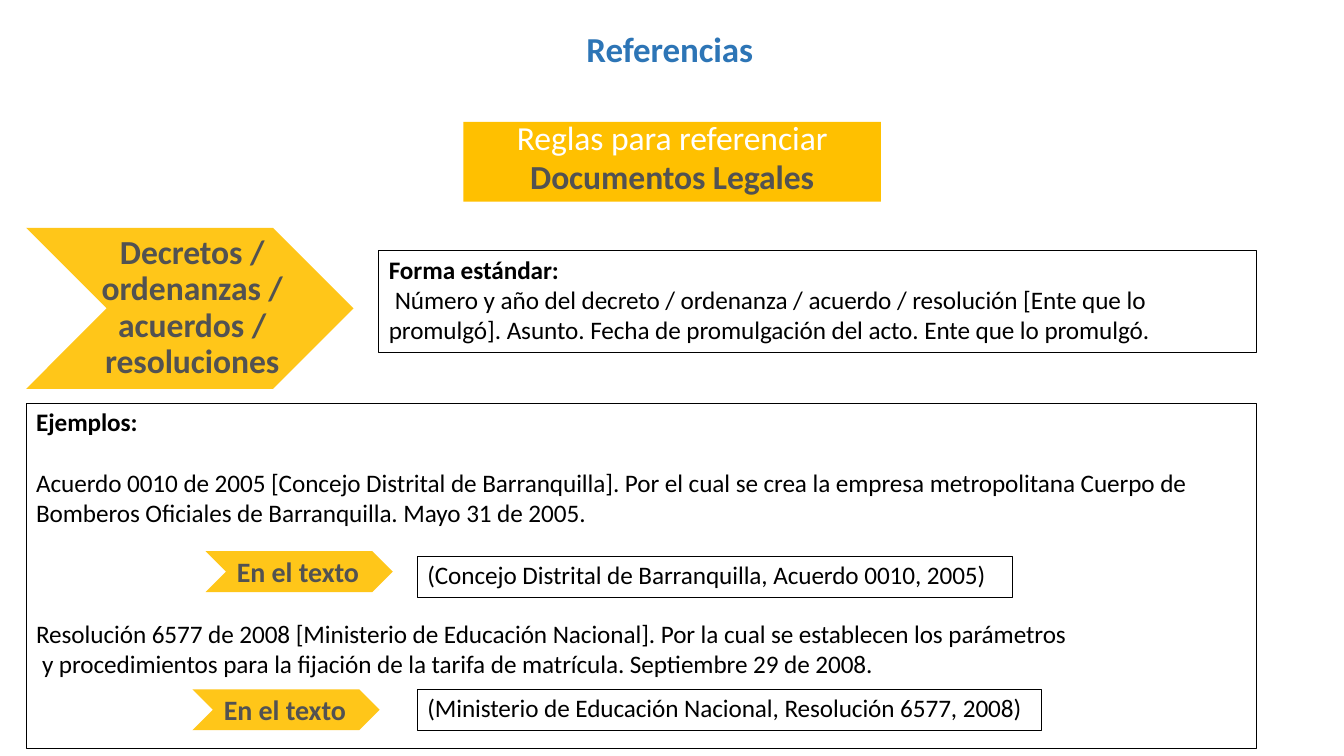
"""Build the slide on referencing legal documents."""
from dataclasses import dataclass

import pptx
import pptx.dml.color
import pptx.enum.shapes
import pptx.enum.text
import pptx.oxml
import pptx.shapes.autoshape
import pptx.slide
import pptx.util

Cm = pptx.util.Cm
Pt = pptx.util.Pt
Align = pptx.enum.text.PP_ALIGN
Anchor = pptx.enum.text.MSO_ANCHOR


@dataclass(frozen=True)
class Theme:
    font: str = "Calibri"
    blue: str = "2D75B6"
    amber: str = "FFC000"
    grey: str = "525252"
    black: str = "000000"
    white: str = "FFFFFF"
    title: float = 25
    heading: float = 24
    label: float = 20
    body: float = 18
    tracking: int = -6
    amber_opacity: int = 90000


THEME = Theme()


@dataclass(frozen=True)
class Area:
    left: float
    top: float
    width: float
    height: float

    def lengths(self) -> tuple[Cm, Cm, Cm, Cm]:
        return Cm(self.left), Cm(self.top), Cm(self.width), Cm(self.height)


@dataclass(frozen=True)
class Line:
    text: str
    size: float = THEME.body
    color: str = THEME.black
    bold: bool = False
    before: float = 0
    spacing: float | None = None
    align: Align = Align.LEFT
    margin: float = 0
    indent: float = 0


@dataclass(frozen=True)
class Chevron:
    area: Area
    line: Line
    margins: tuple[float, float, float, float]
    anchor: Anchor = Anchor.MIDDLE


@dataclass(frozen=True)
class Box:
    area: Area
    lines: tuple[Line, ...]


BOX_MARGINS = (0.25, 0.08, 0, 0)
NO_MARGINS = (0, 0, 0, 0)
LABEL_MARGINS = (0.79, 0, 0, 0)

TITLE = Box(Area(14.78, 0.69, 4.29, 1.12),
            (Line("Referencias", THEME.title, THEME.blue, True, before=0.9),))
RULES = Box(Area(11.68, 3.07, 10.52, 2.01), (
    Line("Reglas para referenciar", THEME.heading, THEME.white, spacing=25.4, align=Align.CENTER),
    Line("Documentos Legales", THEME.heading, THEME.grey, True, spacing=27.4, align=Align.CENTER),
))
EXAMPLES = Box(Area(0.66, 10.16, 31.01, 8.71), (
    Line("Ejemplos:", bold=True, before=2.5),
    Line("Acuerdo 0010 de 2005 [Concejo Distrital de Barranquilla]. Por el cual se crea la "
         "empresa metropolitana Cuerpo de\vBomberos Oficiales de Barranquilla. Mayo 31 de 2005.",
         before=21.6),
    Line("Resolución 6577 de 2008 [Ministerio de Educación Nacional]. Por la cual se establecen "
         "los parámetros\vy procedimientos para la fijación de la tarifa de matrícula. "
         "Septiembre 29 de 2008.", before=65, margin=0.15, indent=-0.15),
))
BOXES = (
    Box(Area(9.55, 6.32, 22.12, 2.57), (
        Line("Forma estándar:", bold=True, before=2.4),
        Line("Número y año del decreto / ordenanza / acuerdo / resolución [Ente que lo\v"
             "promulgó]. Asunto. Fecha de promulgación del acto. Ente que lo promulgó.",
             indent=0.15),
    )),
    Box(Area(10.52, 14.02, 15.01, 1.03),
        (Line("(Concejo Distrital de Barranquilla, Acuerdo 0010, 2005)", before=2.5),)),
    Box(Area(10.52, 17.37, 15.72, 1.03),
        (Line("(Ministerio de Educación Nacional, Resolución 6577, 2008)", before=2.5),)),
)
IN_TEXT = Line("En el texto", THEME.label, THEME.grey, True)
CHEVRONS = (
    Chevron(Area(0.66, 5.74, 8.25, 4.06),
            Line("Decretos /\vordenanzas /\vacuerdos /\vresoluciones", THEME.heading, THEME.grey,
                 True, before=4.2, spacing=25.9, align=Align.CENTER),
            (1.85, 0.18, 1.73, 0), Anchor.TOP),
    Chevron(Area(5.18, 13.89, 4.72, 1.03), IN_TEXT, LABEL_MARGINS),
    Chevron(Area(4.85, 17.37, 4.72, 1.03), IN_TEXT, LABEL_MARGINS),
)


def rgb(color: str) -> pptx.dml.color.RGBColor:
    return pptx.dml.color.RGBColor.from_string(color)


def write(shape: pptx.shapes.autoshape.Shape, lines: tuple[Line, ...],
          margins: tuple[float, float, float, float], anchor: Anchor = Anchor.TOP,
          wrap: bool = True) -> None:
    frame = shape.text_frame
    frame.auto_size = pptx.enum.text.MSO_AUTO_SIZE.NONE
    frame.word_wrap = wrap
    frame.vertical_anchor = anchor
    (frame.margin_left, frame.margin_top,
     frame.margin_right, frame.margin_bottom) = (Cm(margin) for margin in margins)
    frame.text = "\n".join(line.text for line in lines)
    for paragraph, line in zip(frame.paragraphs, lines):
        paragraph.alignment = line.align
        paragraph.space_before = Pt(line.before)
        paragraph.space_after = Pt(0)
        paragraph.line_spacing = Pt(line.spacing) if line.spacing else 1.0
        properties = paragraph._p.get_or_add_pPr()
        properties.set("marL", str(Cm(line.margin)))
        properties.set("indent", str(Cm(line.indent)))
        properties.append(pptx.oxml.parse_xml(
            '<a:buNone xmlns:a="http://schemas.openxmlformats.org/drawingml/2006/main"/>'))
        for run in paragraph.runs:
            run.font.name = THEME.font
            run.font.size = Pt(line.size)
            run.font.bold = line.bold
            run.font.color.rgb = rgb(line.color)
            run._r.get_or_add_rPr().set("spc", str(THEME.tracking))


def place(shape: pptx.shapes.autoshape.Shape, area: Area) -> None:
    shape.left, shape.top, shape.width, shape.height = area.lengths()


def outline(shape: pptx.shapes.autoshape.Shape) -> None:
    shape.fill.background()
    shape.line.color.rgb = rgb(THEME.black)
    shape.line.width = Pt(0.75)


def fill_amber(shape: pptx.shapes.autoshape.Shape) -> None:
    shape.shadow.inherit = False
    shape.fill.solid()
    shape.fill.fore_color.rgb = rgb(THEME.amber)
    shape.line.fill.background()


def add_rectangle(slide: pptx.slide.Slide, area: Area) -> pptx.shapes.autoshape.Shape:
    shape = slide.shapes.add_shape(pptx.enum.shapes.MSO_SHAPE.RECTANGLE, *area.lengths())
    shape.shadow.inherit = False
    return shape


def add_chevron(slide: pptx.slide.Slide, chevron: Chevron) -> None:
    left, top, width, height = chevron.area.lengths()
    notch = height // 2
    right, middle, bottom = left + width, top + notch, top + height
    builder = slide.shapes.build_freeform(left, top)
    builder.add_line_segments([(right - notch, top), (right, middle), (right - notch, bottom),
                               (left, bottom), (left + notch, middle)], close=True)
    shape = builder.convert_to_shape()
    fill_amber(shape)
    color = shape.element.xpath("./p:spPr/a:solidFill/a:srgbClr")[0]
    color.append(pptx.oxml.parse_xml(
        '<a:alpha xmlns:a="http://schemas.openxmlformats.org/drawingml/2006/main" '
        f'val="{THEME.amber_opacity}"/>'))
    write(shape, (chevron.line,), chevron.margins, chevron.anchor)


def main() -> None:
    presentation = pptx.Presentation()
    presentation.slide_width, presentation.slide_height = Cm(33.87), Cm(19.05)
    slide = presentation.slides.add_slide(presentation.slide_layouts[1])
    title, body = slide.shapes.title, slide.placeholders[1]
    place(title, TITLE.area)
    write(title, TITLE.lines, NO_MARGINS, wrap=False)
    place(body, EXAMPLES.area)
    outline(body)
    write(body, EXAMPLES.lines, BOX_MARGINS)
    rules = add_rectangle(slide, RULES.area)
    fill_amber(rules)
    write(rules, RULES.lines, NO_MARGINS)
    for chevron in CHEVRONS:
        add_chevron(slide, chevron)
    for box in BOXES:
        shape = add_rectangle(slide, box.area)
        outline(shape)
        write(shape, box.lines, BOX_MARGINS)
    presentation.save("out.pptx")


if __name__ == "__main__":
    main()
